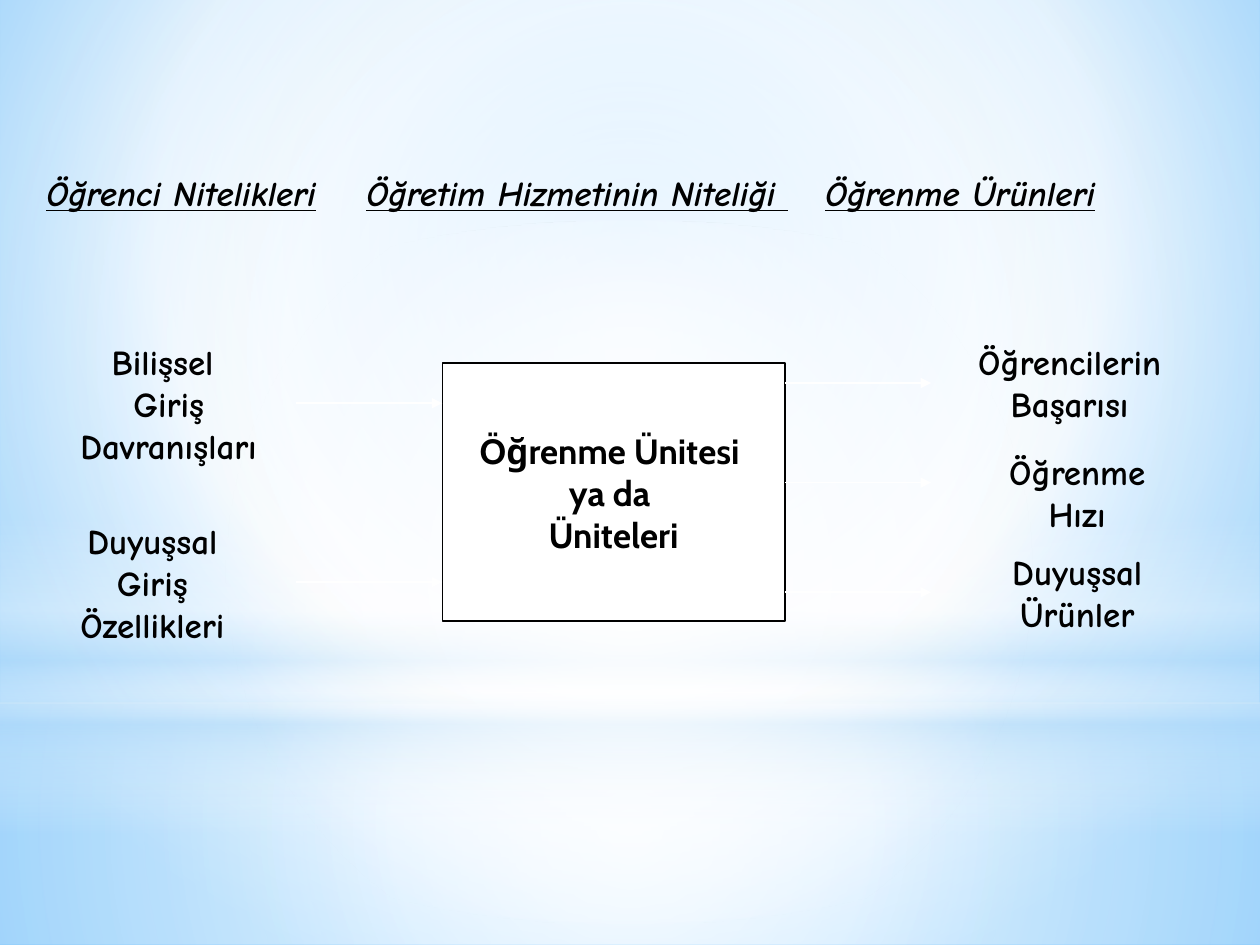
from dataclasses import dataclass
from typing import NamedTuple

from lxml.etree import SubElement
from pptx import Presentation
from pptx.dml.color import RGBColor
from pptx.enum.shapes import MSO_CONNECTOR, MSO_SHAPE
from pptx.enum.text import MSO_ANCHOR, MSO_AUTO_SIZE, PP_ALIGN
from pptx.oxml.ns import qn
from pptx.util import Inches, Pt

COLUMNS, ROWS = 100, 75
CELL = Inches(0.1)


@dataclass(frozen=True)
class Theme:
    ink: str = "000000"
    paper: str = "FFFFFF"
    mist: str = "B4DCFA"
    sky: str = "9ED5FF"
    deep: str = "5BB9FF"
    label_font: str = "Comic Neue"
    unit_font: str = "Cabin"
    size: int = 20
    border: float = 0.75
    arrow: float = 1


THEME = Theme()


class Area(NamedTuple):
    column: float
    row: float
    columns: float
    rows: float


class Stop(NamedTuple):
    position: int
    color: str
    opacity: int = 100


class Glow(NamedTuple):
    outline: MSO_SHAPE
    area: Area
    stops: list[Stop]
    focus: tuple[int, ...] | None = (50, 50, 50, 50)


class Label(NamedTuple):
    area: Area
    lines: list[str]


class Flow(NamedTuple):
    start: float
    end: float
    row: float


PAPER, MIST = THEME.paper, THEME.mist
BACKDROP = [Stop(0, THEME.sky), Stop(60, PAPER), Stop(100, THEME.deep)]
BACKDROP_FOCUS = (20, 10, 20, 60)
HORIZON = 55.8
GLOWS = [
    Glow(MSO_SHAPE.RECTANGLE, Area(0, HORIZON, COLUMNS, ROWS - HORIZON),
         [Stop(0, PAPER, 91), Stop(37, PAPER, 76), Stop(100, MIST, 79)]),
    Glow(MSO_SHAPE.RECTANGLE, Area(0, 0, COLUMNS, HORIZON),
         [Stop(0, PAPER, 89), Stop(48, PAPER, 62), Stop(100, MIST, 79)]),
    Glow(MSO_SHAPE.RECTANGLE, Area(0, 41.2, COLUMNS, 25),
         [Stop(0, PAPER, 0), Stop(29, PAPER, 30), Stop(45, MIST, 40),
          Stop(55, PAPER, 26), Stop(65, MIST, 60), Stop(100, PAPER, 0)], None),
    Glow(MSO_SHAPE.OVAL, Area(0, 17.5, COLUMNS, HORIZON),
         [Stop(0, PAPER), Stop(56, PAPER, 0)]),
]

HEADINGS = ["Öğrenci Nitelikleri", "Öğretim Hizmetinin Niteliği ", "Öğrenme Ürünleri"]
HEADING_AREA = Area(2.7, 13.1, 97.3, 4.3)
HEADING_TABS = [25.4, 61.8]

UNIT = Label(Area(35.1, 28.8, 27.2, 20.5), ["Öğrenme Ünitesi ", "ya da ", "Üniteleri"])
LABEL_WIDTH, TWO_LINES, THREE_LINES = 21.6, 7.7, 11
LABELS = [
    Label(Area(74.1, 26.5, LABEL_WIDTH, TWO_LINES), ["Öğrencilerin Başarısı"]),
    Label(Area(74.7, 35.3, LABEL_WIDTH, TWO_LINES), ["Öğrenme", "Hızı"]),
    Label(Area(74.7, 43.2, LABEL_WIDTH, TWO_LINES), ["Duyuşsal Ürünler"]),
    Label(Area(2.6, 26.5, LABEL_WIDTH, THREE_LINES), ["Bilişsel ", "Giriş Davranışları"]),
    Label(Area(1.3, 40.7, LABEL_WIDTH, THREE_LINES), ["Duyuşsal", "Giriş", "Özellikleri"]),
]

ARROW_LENGTH = 11.6
UNIT_LEFT = UNIT.area.column
UNIT_RIGHT = UNIT_LEFT + UNIT.area.columns
FLOWS = [Flow(UNIT_RIGHT, UNIT_RIGHT + ARROW_LENGTH, row) for row in (30.4, 38.3, 47)]
FLOWS += [Flow(UNIT_LEFT - ARROW_LENGTH, UNIT_LEFT, row) for row in (32, 46.2)]


def cells(count: float) -> int:
    return round(count * CELL)


def place(area: Area) -> list[int]:
    return [cells(length) for length in area]


def paint_gradient(owner, fill, stops: list[Stop], focus: tuple[int, ...] | None) -> None:
    fill.gradient()
    gradient = owner.element.find(".//" + qn("a:gradFill"))
    for child in list(gradient):
        gradient.remove(child)
    stop_list = SubElement(gradient, qn("a:gsLst"))
    for stop in stops:
        mark = SubElement(stop_list, qn("a:gs"), pos=str(stop.position * 1000))
        color = SubElement(mark, qn("a:srgbClr"), val=stop.color)
        if stop.opacity < 100:
            SubElement(color, qn("a:alpha"), val=str(stop.opacity * 1000))
    if focus is None:
        SubElement(gradient, qn("a:lin"), ang=str(90 * 60000), scaled="0")
    else:
        center = SubElement(gradient, qn("a:path"), path="circle")
        sides = {side: str(share * 1000) for side, share in zip("ltrb", focus)}
        SubElement(center, qn("a:fillToRect"), **sides)


def add_glow(slide, glow: Glow) -> None:
    shape = slide.shapes.add_shape(glow.outline, *place(glow.area))
    shape.shadow.inherit = False
    shape.line.fill.background()
    paint_gradient(shape, shape.fill, glow.stops, glow.focus)


def add_run(paragraph, words: str, family: str, **extra: bool) -> None:
    run = paragraph.add_run()
    run.text = words
    formats = {"name": family, "size": Pt(THEME.size), "bold": True, **extra}
    for attribute, setting in formats.items():
        setattr(run.font, attribute, setting)
    run.font.color.rgb = RGBColor.from_string(THEME.ink)


def write_lines(frame, lines: list[str], family: str) -> None:
    for index, line in enumerate(lines):
        paragraph = frame.add_paragraph() if index else frame.paragraphs[0]
        paragraph.alignment = PP_ALIGN.CENTER
        add_run(paragraph, line, family)


def add_text_frame(slide, area: Area):
    frame = slide.shapes.add_textbox(*place(area)).text_frame
    formats = {"word_wrap": True, "auto_size": MSO_AUTO_SIZE.SHAPE_TO_FIT_TEXT}
    for attribute, setting in formats.items():
        setattr(frame, attribute, setting)
    return frame


def add_headings(slide) -> None:
    paragraph = add_text_frame(slide, HEADING_AREA).paragraphs[0]
    tab_list = SubElement(paragraph._p.get_or_add_pPr(), qn("a:tabLst"))
    for column in HEADING_TABS:
        SubElement(tab_list, qn("a:tab"), pos=str(cells(column)), algn="l")
    for index, heading in enumerate(HEADINGS):
        if index:
            add_run(paragraph, "\t", THEME.label_font, italic=True, underline=False)
        add_run(paragraph, heading, THEME.label_font, italic=True, underline=True)


def add_unit(slide, unit: Label) -> None:
    shape = slide.shapes.add_shape(MSO_SHAPE.RECTANGLE, *place(unit.area))
    shape.shadow.inherit = False
    shape.fill.solid()
    shape.fill.fore_color.rgb = RGBColor.from_string(THEME.paper)
    shape.line.color.rgb = RGBColor.from_string(THEME.ink)
    shape.line.width = Pt(THEME.border)
    formats = {"word_wrap": False, "vertical_anchor": MSO_ANCHOR.MIDDLE}
    for attribute, setting in formats.items():
        setattr(shape.text_frame, attribute, setting)
    write_lines(shape.text_frame, unit.lines, THEME.unit_font)


def add_flow(slide, flow: Flow) -> None:
    ends = [cells(end) for end in (flow.start, flow.row, flow.end, flow.row)]
    arrow = slide.shapes.add_connector(MSO_CONNECTOR.STRAIGHT, *ends)
    arrow.line.color.rgb = RGBColor.from_string(THEME.paper)
    arrow.line.width = Pt(THEME.arrow)
    SubElement(arrow.line._get_or_add_ln(), qn("a:tailEnd"), type="triangle")
    SubElement(arrow.element.spPr, qn("a:effectLst"))


def main() -> None:
    deck = Presentation()
    deck.slide_width, deck.slide_height = cells(COLUMNS), cells(ROWS)
    slide = deck.slides.add_slide(deck.slide_layouts.get_by_name("Blank"))
    paint_gradient(slide, slide.background.fill, BACKDROP, BACKDROP_FOCUS)
    for glow in GLOWS:
        add_glow(slide, glow)
    add_headings(slide)
    add_unit(slide, UNIT)
    for flow in FLOWS:
        add_flow(slide, flow)
    for label in LABELS:
        write_lines(add_text_frame(slide, label.area), label.lines, THEME.label_font)
    deck.save("out.pptx")


if __name__ == "__main__":
    main()
